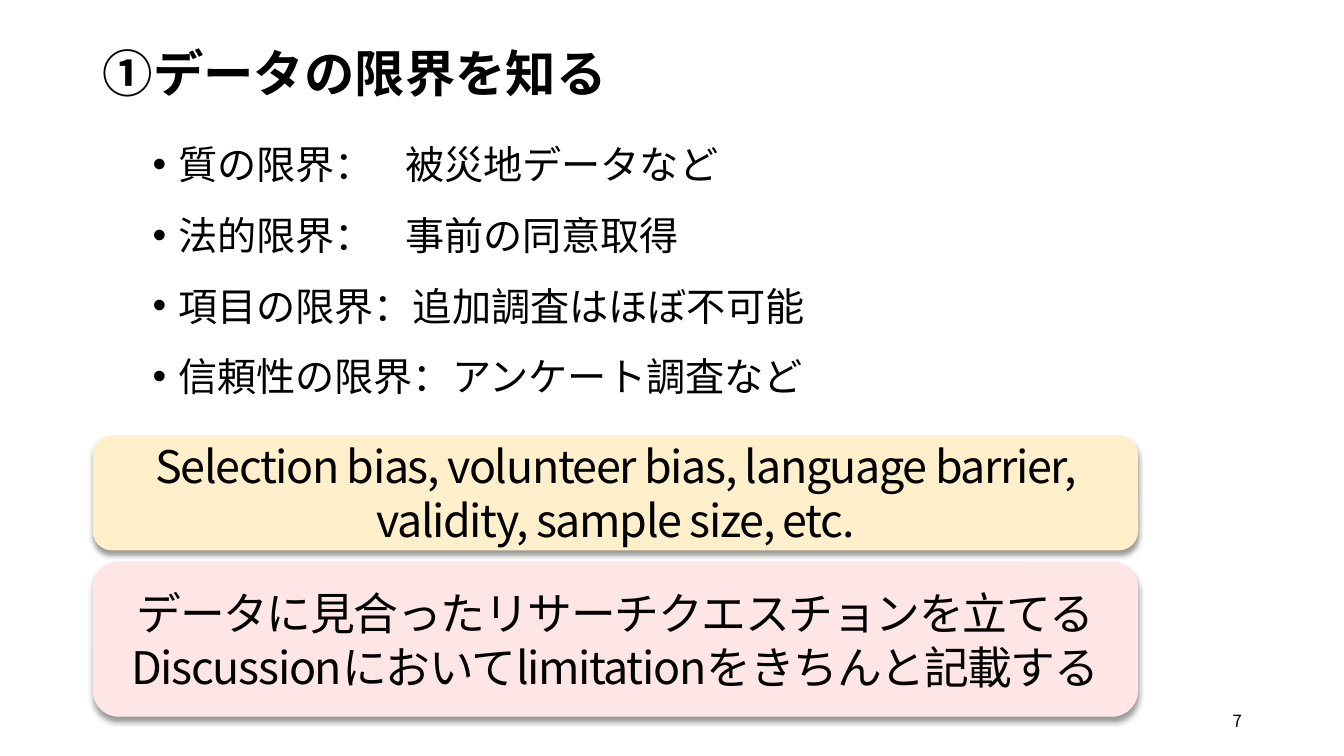
"""Builds the slide on knowing the limits of the data."""
from lxml.etree import SubElement
from pptx import Presentation
from pptx.dml.color import RGBColor
from pptx.enum.shapes import MSO_SHAPE
from pptx.enum.text import MSO_ANCHOR as Anchor, PP_ALIGN as Align
from pptx.oxml.ns import qn
from pptx.util import Cm, Pt

FONT = "Noto Sans CJK JP"
BLACK = RGBColor(0x00, 0x00, 0x00)
CREAM = RGBColor(0xFF, 0xEF, 0xCA)
PINK = RGBColor(0xFF, 0xE6, 0xE6)
LEFT = 2.34


def write(frame, lines, anchor, font_format, paragraph_format):
    """Fill a text frame, one paragraph a line."""
    frame.word_wrap = True
    frame.vertical_anchor = anchor
    frame.text = "\n".join(lines)
    for paragraph in frame.paragraphs:
        for name, value in paragraph_format.items():
            setattr(paragraph, name, value)
        for run in paragraph.runs:
            run.font.color.rgb = BLACK
            for name, value in {"name": FONT, **font_format}.items():
                setattr(run.font, name, value)
            SubElement(run.font._element, qn("a:ea"), typeface=FONT)


deck = Presentation()
deck.slide_width, deck.slide_height = Cm(33.87), Cm(19.05)
slide = deck.slides.add_slide(deck.slide_layouts[6])

title = slide.shapes.add_textbox(Cm(LEFT), Cm(1.02), Cm(29.21), Cm(1.8))
write(title.text_frame, ["①データの限界を知る"], Anchor.MIDDLE,
      {"size": Pt(36), "bold": True}, {"line_spacing": 0.9})

limits = slide.shapes.add_textbox(Cm(LEFT), Cm(2.82), Cm(29.21), Cm(8.15))
limit_lines = [
    "質の限界：\t被災地データなど",
    "法的限界：\t事前の同意取得",
    "項目の限界：追加調査はほぼ不可能",
    "信頼性の限界：アンケート調査など",
]
write(limits.text_frame, limit_lines, Anchor.TOP,
      {"size": Pt(28)}, {"line_spacing": Pt(50.5)})
for limit in limits.text_frame.paragraphs:
    properties = limit._p.get_or_add_pPr()
    properties.set("marL", str(Cm(1.9)))
    properties.set("indent", str(-Cm(0.64)))
    SubElement(properties, qn("a:buFont"), typeface="Arial")
    SubElement(properties, qn("a:buChar"), char="•")

messages = [
    (14.15, 3.91, PINK, ["データに見合ったリサーチクエスチョンを立てる",
                         "Discussionにおいてlimitationをきちんと記載する"]),
    (10.97, 2.9, CREAM, ["Selection bias, volunteer bias, language barrier, "
                         "validity, sample size, etc."]),
]
for top, height, color, lines in messages:
    message = slide.shapes.add_shape(MSO_SHAPE.ROUNDED_RECTANGLE, Cm(LEFT),
                                     Cm(top), Cm(26.34), Cm(height))
    message.fill.solid()
    message.fill.fore_color.rgb = color
    message.line.fill.background()
    message.shadow.inherit = False
    effects = message._element.spPr.find(qn("a:effectLst"))
    shadow = SubElement(effects, qn("a:outerShdw"), blurRad=str(Pt(4)),
                        dist=str(Pt(3)), dir="5400000", rotWithShape="0")
    shade = SubElement(shadow, qn("a:srgbClr"), val=str(BLACK))
    SubElement(shade, qn("a:alpha"), val="40000")
    write(message.text_frame, lines, Anchor.MIDDLE, {"size": Pt(32)},
          {"alignment": Align.CENTER, "line_spacing": Pt(38.6)})
    for paragraph in message.text_frame.paragraphs:
        for run in paragraph.runs:
            run.font._element.set("spc", "-100")

page_number = slide.shapes.add_textbox(Cm(23.93), Cm(17.65), Cm(7.62), Cm(1.02))
write(page_number.text_frame, ["7"], Anchor.MIDDLE,
      {"size": Pt(12)}, {"alignment": Align.RIGHT})

deck.save("out.pptx")
